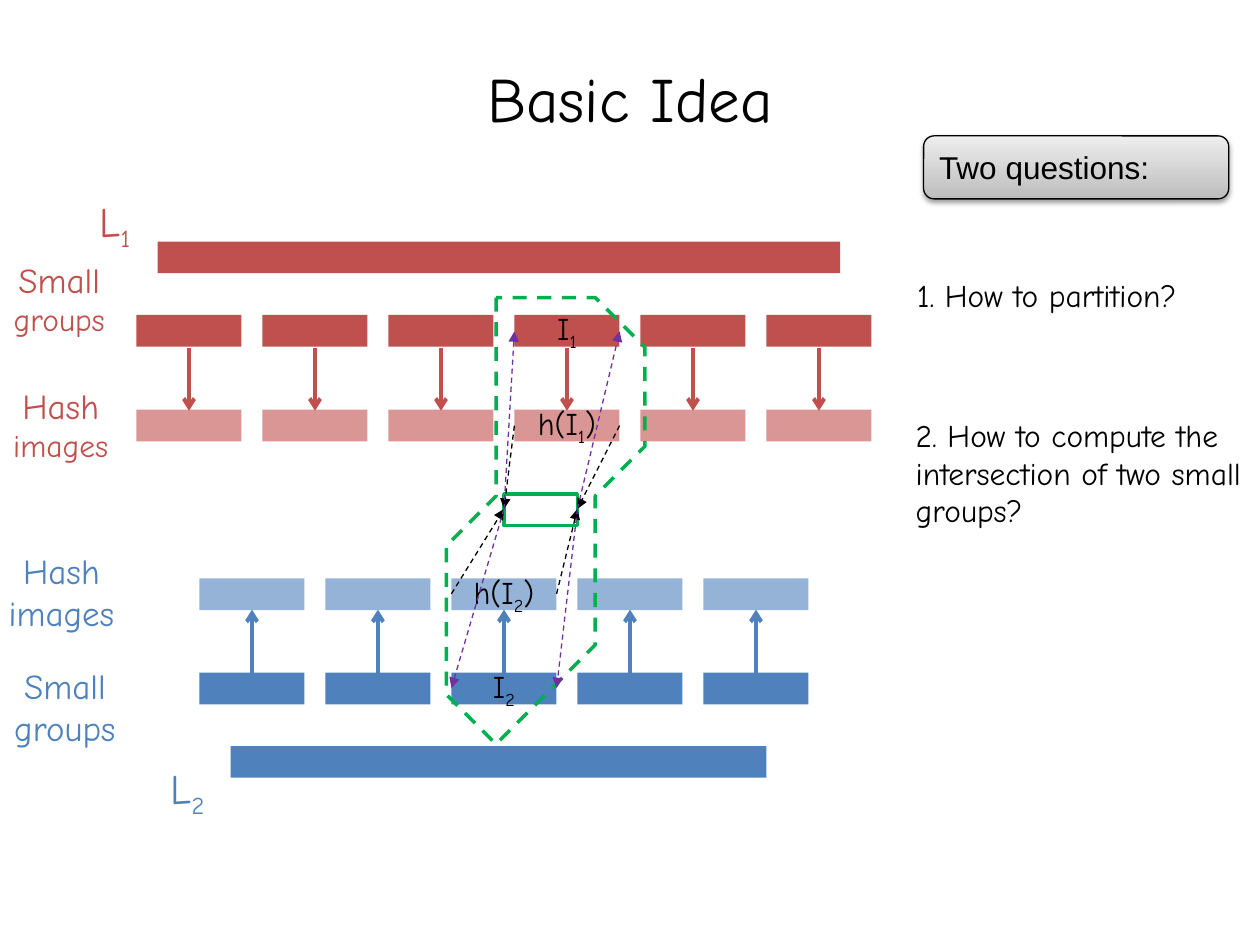
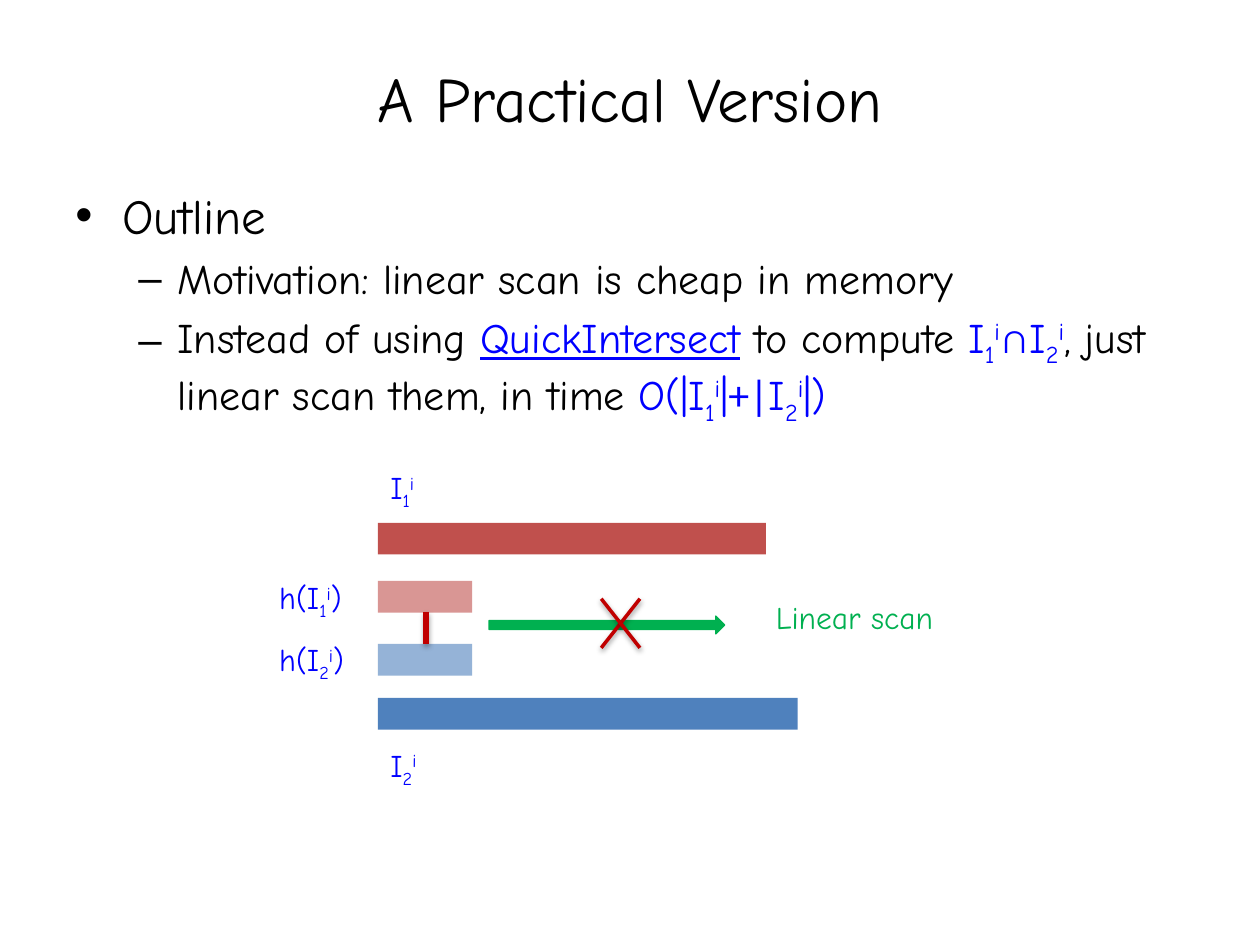
"""Two slides on list intersection: the basic idea and a practical version."""
from lxml.etree import SubElement as Sub
from pptx import Presentation
from pptx.dml.color import RGBColor
from pptx.enum.dml import MSO_LINE
from pptx.enum.shapes import MSO_CONNECTOR as LINK, MSO_SHAPE as FORM
from pptx.enum.text import MSO_ANCHOR as ANCHOR, PP_ALIGN as ALIGN
from pptx.oxml import parse_xml as load
from pptx.oxml.ns import nsdecls, qn
from pptx.util import Cm, Pt

INK = RGBColor(0x00, 0x00, 0x00)
WHITE = RGBColor(0xFF, 0xFF, 0xFF)
RED = RGBColor(0xC0, 0x50, 0x4D)
ROSE = RGBColor(0xD9, 0x96, 0x94)
BLUE = RGBColor(0x4F, 0x81, 0xBD)
SKY = RGBColor(0x95, 0xB3, 0xD7)
GREEN = RGBColor(0x00, 0xB0, 0x50)
PURPLE = RGBColor(0x70, 0x30, 0xA0)
DARK = RGBColor(0xC0, 0x00, 0x00)
VIVID = RGBColor(0x00, 0x00, 0xFF)
GRAYS = [RGBColor(0xBD, 0xBD, 0xBD), RGBColor(0xEE, 0xEE, 0xEE)]
FACE = "Comic Neue"
BAR = 0.64
PITCH = 2.54
CELL = 2.12
PLAIN = f"<a:effectLst {nsdecls('a')}/>"
SHADE = (f"<a:effectLst {nsdecls('a')}>"
         '<a:outerShdw blurRad="39370" dist="20320" dir="5400000" rotWithShape="0">'
         '<a:srgbClr val="000000"><a:alpha val="38000"/></a:srgbClr>'
         "</a:outerShdw></a:effectLst>")


def box(page, x, y, w, h, fill=None, edge=None, width=0.75, form=FORM.RECTANGLE):
    """Add a filled shape, or a text box when form is None."""
    place = Cm(x), Cm(y), Cm(w), Cm(h)
    if form is None:
        return page.shapes.add_textbox(*place)
    shape = page.shapes.add_shape(form, *place)
    shape.shadow.inherit = False
    shape.fill.solid()
    shape.fill.fore_color.rgb = fill
    if edge is None:
        shape.line.fill.background()
    else:
        shape.line.color.rgb = edge
        shape.line.width = Pt(width)
    return shape


def write(shape, text, size=18, hue=INK, face=FACE, align=ALIGN.LEFT,
          wrap=False, under=False, more=False):
    """Write a paragraph or, with more, extend it; ~_ lowers and ~^ raises."""
    frame = shape.text_frame
    frame.word_wrap = wrap
    para = frame.paragraphs[-1]
    if para.runs and not more:
        para = frame.add_paragraph()
    para.alignment = align
    for part in text.split("~"):
        run = para.add_run()
        run.text = part.lstrip("_^")
        font = run.font
        font.size, font.name, font.color.rgb = Pt(size), face, hue
        if under:
            font.underline = True
        if part[:1] in ("_", "^"):
            shift = "-25000" if part[0] == "_" else "30000"
            run._r.get_or_add_rPr().set("baseline", shift)
    return para


deck = Presentation()
deck.slide_width, deck.slide_height = Cm(25.4), Cm(19.05)
idea, plan = [deck.slides.add_slide(deck.slide_layouts[6]) for _ in range(2)]
for page, title in [(idea, "Basic Idea"), (plan, "A Practical Version")]:
    head = box(page, 1.27, 0.76, 22.86, 2.41, form=None)
    head.text_frame.vertical_anchor = ANCHOR.MIDDLE
    write(head, title, size=36, align=ALIGN.CENTER, wrap=True)

for page, x, y, w, hue in [
    (idea, 3.18, 4.87, 13.76, RED),
    (idea, 4.65, 15.04, 10.8, BLUE),
    (plan, 7.62, 10.54, 7.82, RED),
    (plan, 7.62, 14.07, 8.46, BLUE),
    (plan, 7.62, 12.98, 1.9, SKY),
    (plan, 7.62, 11.71, 1.9, ROSE),
]:
    box(page, x, y, w, BAR, hue)

lines = []
for hue, tint, left, count, pick, group, image, start, end, name in [
    (RED, ROSE, 2.75, 6, 3, 6.35, 8.26, 7.01, 8.28, "I~_1"),
    (BLUE, SKY, 4.02, 5, 2, 13.56, 11.66, 13.56, 12.29, "I~_2"),
]:
    for i in range(count):
        x = left + i * PITCH
        small = box(idea, x, group, CELL, BAR, hue)
        hashed = box(idea, x, image, CELL, BAR, tint)
        if i == pick:
            write(small, name, align=ALIGN.CENTER)
            write(hashed, f"h({name}~)", align=ALIGN.CENTER)
        mid = x + CELL / 2
        lines.append((idea, mid, start, mid, end, hue, 2.25, "arrow", False))

for x, y, w, hue, rows in [
    (1.7, 3.81, 1.24, RED, [("L~_1", 24)]),
    (3.12, 15.24, 1.32, BLUE, [("L~_2", 24)]),
    (-0.05, 5.08, 2.49, RED, [("Small", 20), ("groups", 18)]),
    (-0.03, 7.62, 2.51, RED, [("Hash", 20), ("images", 18)]),
    (-0.13, 10.95, 2.74, BLUE, [("Hash", 20), ("images", 20)]),
    (-0.05, 13.28, 2.72, BLUE, [("Small", 20), ("groups", 20)]),
]:
    label = box(idea, x, y, w, 1.27 if len(rows) == 1 else 1.96, form=None)
    for text, size in rows:
        write(label, text, size=size, hue=hue, align=ALIGN.CENTER)

for x, y, w, h, text in [
    (18.24, 5.44, 7.16, 1.02, "1. How to partition?"),
    (18.21, 8.26, 7.19, 2.57,
     "2. How to compute the intersection of two small groups?"),
]:
    write(box(idea, x, y, w, h, form=None), text, wrap=True)

panel = box(idea, 18.62, 2.74, 6.15, 1.27, WHITE, INK, form=FORM.ROUNDED_RECTANGLE)
panel.fill.gradient()
panel.fill.gradient_angle = 90
for stop, gray in zip(panel.fill.gradient_stops, GRAYS):
    stop.color.rgb = gray
props = panel._element.spPr
props.remove(props.find(qn("a:effectLst")))
props.append(load(SHADE))
write(panel, "Two questions:", face="Arial", wrap=True)

ring = [(10.46, 5.74), (9.88, 7.34), (9.7, 9.55), (9.17, 11.35), (8.81, 12.62),
        (8.79, 14.22), (9.96, 14.81), (11.43, 14.43), (11.63, 12.52),
        (12.22, 10.46), (12.73, 8.79), (12.8, 6.55), (11.81, 5.61)]
pen = idea.shapes.build_freeform(*ring[0], scale=Cm(1))
pen.add_line_segments(ring[1:], close=True)
loop = pen.convert_to_shape()
loop.shadow.inherit = False
loop.fill.background()
loop.line.color.rgb = GREEN
loop.line.width = Pt(2)
loop.line.dash_style = MSO_LINE.DASH

box(idea, 10.16, 9.96, 1.48, BAR, WHITE, GREEN, 2)
for x, rim, image, group in [
    (10.37, 10.16, 8.58, 6.68),
    (12.49, 11.64, 8.58, 6.68),
    (11.22, 11.64, 11.97, 13.87),
    (9.1, 10.16, 11.97, 13.87),
]:
    lines.append((idea, x, image, rim, 10.26, INK, 0.75, "triangle", True))
    lines.append((idea, rim, 10.26, x, group, PURPLE, 0.75, "triangle", True))

body = box(plan, 1.27, 3.61, 22.86, 15.04, form=None)
top = write(body, "Outline", size=28, wrap=True)
why = write(body, "Motivation: linear scan is cheap in memory", size=24, wrap=True)
how = write(body, "Instead of using ", size=24, wrap=True)
for text, hue, face, under in [
    ("QuickIntersect", VIVID, FACE, True),
    (" to compute ", INK, FACE, False),
    ("I~_1~^i", VIVID, FACE, False),
    ("∩", VIVID, "Calibri", False),
    ("I~_2~^i", VIVID, FACE, False),
    (", just linear scan them, in time ", INK, FACE, False),
    ("O(|I~_1~^i~|", VIVID, FACE, False),
    ("+|", VIVID, "Calibri", False),
    ("I~_2~^i~|)", VIVID, FACE, False),
]:
    write(body, text, size=24, hue=hue, face=face, under=under, wrap=True, more=True)
for para, mark, left, hang, gap in [
    (top, "•", 0.95, 0.95, 5.6),
    (why, "–", 2.06, 0.79, 4.8),
    (how, "–", 2.06, 0.79, 4.8),
]:
    para.space_before = Pt(gap)
    props = para._p.get_or_add_pPr()
    props.set("marL", str(Cm(left)))
    props.set("indent", str(-Cm(hang)))
    Sub(props, qn("a:buFont"), typeface="Arial")
    Sub(props, qn("a:buChar"), char=mark)

for x, y, w, text, hue in [
    (5.38, 11.53, 2.01, "h(I~_1~^i~)", VIVID),
    (5.38, 12.78, 2.08, "h(I~_2~^i~)", VIVID),
    (7.62, 9.32, 1.17, "I~_1~^i", VIVID),
    (7.62, 14.91, 1.24, "I~_2~^i", VIVID),
    (15.39, 11.94, 3.86, "Linear scan", GREEN),
]:
    write(box(plan, x, y, w, 1.02, form=None), text, hue=hue)

box(plan, 9.86, 12.42, 4.75, 0.36, GREEN, GREEN, form=FORM.RIGHT_ARROW)
lines += [
    (plan, 8.59, 12.34, 8.59, 12.98, DARK, 3, None, False),
    (plan, 12.9, 12.07, 12.12, 13.06, DARK, 2, None, False),
    (plan, 12.12, 12.07, 12.9, 13.06, DARK, 2, None, False),
]
for page, x1, y1, x2, y2, hue, width, tip, dash in lines:
    link = page.shapes.add_connector(LINK.STRAIGHT, Cm(x1), Cm(y1), Cm(x2), Cm(y2))
    link.line.color.rgb = hue
    link.line.width = Pt(width)
    if dash:
        link.line.dash_style = MSO_LINE.DASH
    props = link._element.spPr
    if tip:
        Sub(props.find(qn("a:ln")), qn("a:tailEnd"), type=tip)
    props.append(load(PLAIN if tip else SHADE))

deck.save("out.pptx")
